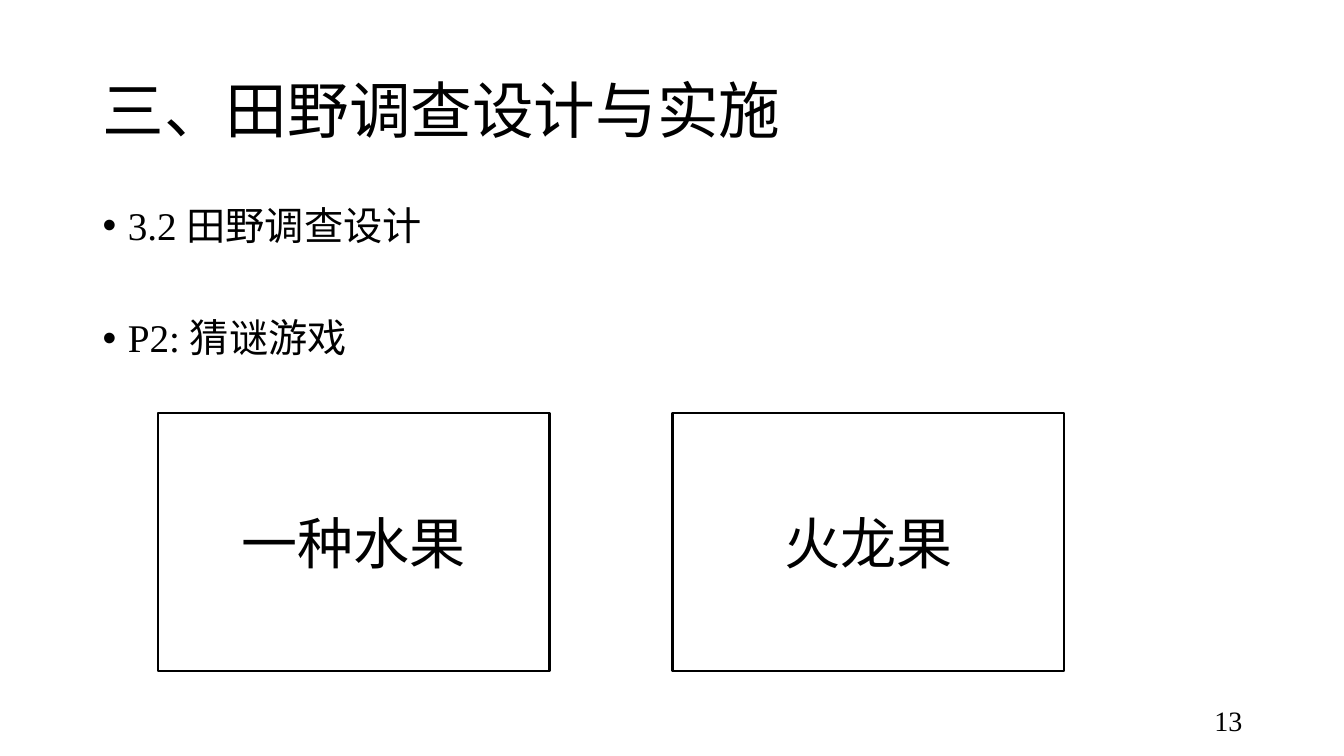
from lxml import etree
from pptx import Presentation
from pptx.dml.color import RGBColor
from pptx.enum.shapes import MSO_SHAPE
from pptx.enum.text import MSO_ANCHOR, PP_ALIGN
from pptx.oxml.ns import qn
from pptx.util import Inches, Pt

RECTANGLE = MSO_SHAPE.RECTANGLE
TOP, MIDDLE = MSO_ANCHOR.TOP, MSO_ANCHOR.MIDDLE
LEFT, CENTER, RIGHT = PP_ALIGN.LEFT, PP_ALIGN.CENTER, PP_ALIGN.RIGHT

TITLE = "三、田野调查设计与实施"
BULLETS = [("3.2 田野调查设计", 10), ("P2: 猜谜游戏", 50)]
CARDS = ["一种水果", "火龙果"]
PAGE_NUMBER = "13"

CHINESE, LATIN = "Noto Sans CJK SC", "Times New Roman"
BLACK, WHITE = "000000", "FFFFFF"
CARD_LEFT, CARD_TOP, CARD_PITCH = 1.57, 4.1, 5.1
CARD_WIDTH, CARD_HEIGHT = 3.88, 2.56


def color(value):
    return RGBColor.from_string(value)


def style(para, size, font, align=LEFT):
    para.alignment = align
    para.font.size = Pt(size)
    para.font.name = font
    para.font.color.rgb = color(BLACK)
    for span in para.runs:
        properties = span._r.get_or_add_rPr()
        etree.SubElement(properties, qn("a:ea")).set("typeface", CHINESE)


def add_text(page, place, anchor):
    box = page.shapes.add_textbox(*map(Inches, place))
    box.text_frame.word_wrap = True
    box.text_frame.vertical_anchor = anchor
    return box.text_frame


def add_bullet(para):
    properties = para._p.get_or_add_pPr()
    properties.set("marL", str(Inches(0.25)))
    properties.set("indent", str(-Inches(0.25)))
    for tag, name, value in (("a:buFont", "typeface", "Arial"), ("a:buChar", "char", "•")):
        mark = etree.Element(qn(tag))
        mark.set(name, value)
        properties.find(qn("a:defRPr")).addprevious(mark)


def add_card(page, index, text):
    left = CARD_LEFT + index * CARD_PITCH
    card = page.shapes.add_shape(
        RECTANGLE, *map(Inches, (left, CARD_TOP, CARD_WIDTH, CARD_HEIGHT)))
    card.shadow.inherit = False
    card.fill.solid()
    card.fill.fore_color.rgb = color(WHITE)
    card.line.color.rgb = color(BLACK)
    card.line.width = Pt(1.5)
    card.text_frame.vertical_anchor = MIDDLE
    para = card.text_frame.paragraphs[0]
    para.text = text
    style(para, 40, CHINESE, CENTER)


def main():
    deck = Presentation()
    deck.slide_width, deck.slide_height = Inches(13.33), Inches(7.5)
    page = deck.slides.add_slide(deck.slide_layouts[6])

    title = add_text(page, (0.92, 0.4, 11.5, 1.45), MIDDLE).paragraphs[0]
    title.text = TITLE
    title.line_spacing = 0.9
    style(title, 44, CHINESE)

    body = add_text(page, (0.92, 2, 11.5, 4.76), TOP)
    for index, (text, space) in enumerate(BULLETS):
        para = body.add_paragraph() if index else body.paragraphs[0]
        para.text = text
        para.line_spacing = 0.9
        para.space_before = Pt(space)
        style(para, 28, LATIN)
        add_bullet(para)

    for index, text in enumerate(CARDS):
        add_card(page, index, text)

    number = add_text(page, (9.42, 6.95, 3, 0.4), MIDDLE).paragraphs[0]
    number.text = PAGE_NUMBER
    style(number, 20, LATIN, RIGHT)

    deck.save("out.pptx")


if __name__ == "__main__":
    main()
